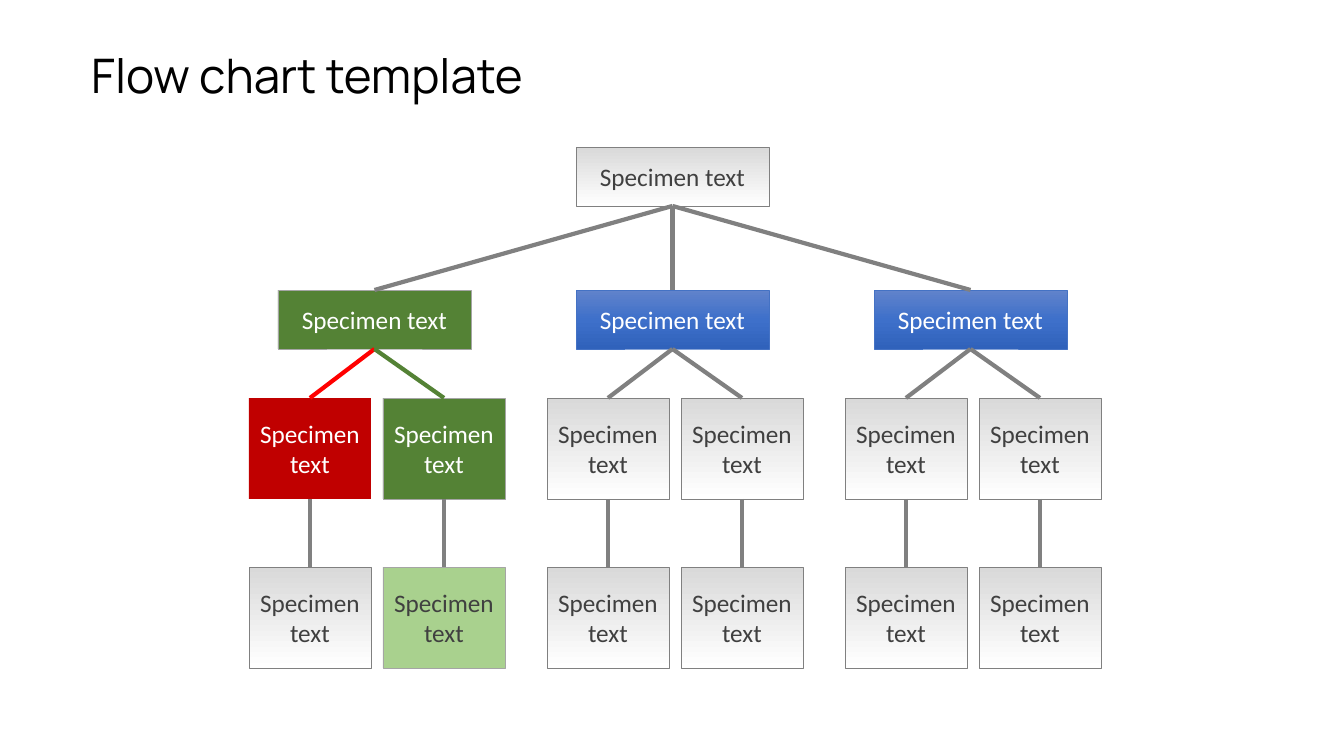
import copy
import pptx
import pptx.util
import pptx.dml.color
import pptx.enum.shapes
import pptx.enum.text
import pptx.oxml
import pptx.oxml.ns

PX = 914400 / 100.8
COLORS = {
    "black": "000000", "white": "FFFFFF", "text": "404040",
    "line": "808080", "edge": "A5A5A5", "silver": "D9D9D9",
    "green": "548235", "light_green": "A9D18E", "dark_red": "C00000", "red": "FF0000",
    "blue_top": "6183CB", "blue_mid": "3E70CA", "blue_end": "3062BB", "blue_edge": "4472C4",
}
RGB = {name: pptx.dml.color.RGBColor.from_string(value) for name, value in COLORS.items()}
STYLES = {
    "plain": (["silver", "white"], "line", "text"),
    "blue": (["blue_top", "blue_mid", "blue_end"], "blue_edge", "white"),
    "green": (["green"], "edge", "white"),
    "light_green": (["light_green"], "edge", "text"),
    "red": (["dark_red"], None, "white"),
}

prs = pptx.Presentation()
prs.slide_width = round(1344 * PX)
prs.slide_height = round(756 * PX)
slide = prs.slides.add_slide(prs.slide_layouts[5])


def add_box(x, y, w, h, style):
    fills, edge, ink = STYLES[style]
    s = slide.shapes.add_shape(pptx.enum.shapes.MSO_SHAPE.RECTANGLE,
                               *[round(v * PX) for v in (x, y, w, h)])
    s.shadow.inherit = False
    if len(fills) == 1:
        s.fill.solid()
        s.fill.fore_color.rgb = RGB[fills[0]]
    else:
        s.fill.gradient()
        s.fill.gradient_angle = 270
        stops = s._element.spPr.find(".//" + pptx.oxml.ns.qn("a:gsLst"))
        for _ in fills[2:]:
            stops.append(copy.deepcopy(stops[0]))
        for i, stop in enumerate(s.fill.gradient_stops):
            stop.position = i / (len(fills) - 1)
            stop.color.rgb = RGB[fills[i]]
    if edge:
        s.line.color.rgb = RGB[edge]
        s.line.width = pptx.util.Pt(0.5)
    else:
        s.line.fill.background()
    tf = s.text_frame
    tf.text = "Specimen text"
    tf.word_wrap = True
    tf.margin_left = tf.margin_right = round(5 * PX)
    tf.vertical_anchor = pptx.enum.text.MSO_ANCHOR.MIDDLE
    p = tf.paragraphs[0]
    p.alignment = pptx.enum.text.PP_ALIGN.CENTER
    r = p.runs[0]
    r.font.name = "Calibri"
    r.font.size = pptx.util.Pt(18)
    r.font.color.rgb = RGB[ink]
    return s


def join(upper, lower, color):
    c = slide.shapes.add_connector(pptx.enum.shapes.MSO_CONNECTOR.STRAIGHT, 0, 0, 0, 0)
    c.begin_connect(upper, 2)
    c.end_connect(lower, 0)
    c.line.color.rgb = RGB[color]
    c.line.width = pptx.util.Pt(3)
    c._element.spPr.append(pptx.oxml.parse_xml(
        "<a:effectLst %s/>" % pptx.oxml.ns.nsdecls("a")))


title = slide.shapes.title
title.left, title.top, title.width, title.height = [round(v * PX) for v in (81, 35, 605, 86)]
tf = title.text_frame
tf.text = "Flow chart template"
tf.word_wrap = True
tf.vertical_anchor = pptx.enum.text.MSO_ANCHOR.MIDDLE
p = tf.paragraphs[0]
p.alignment = pptx.enum.text.PP_ALIGN.LEFT
p.line_spacing = 0.9
r = p.runs[0]
r.font.name = "Manrope"
r.font.size = pptx.util.Pt(34)
r.font.color.rgb = RGB["black"]

plain_leaf = ("plain", "plain", "line")
branches = [
    ("green", [("red", "plain", "red"), ("green", "light_green", "green")]),
    ("blue", [plain_leaf, plain_leaf]),
    ("blue", [plain_leaf, plain_leaf]),
]

root = add_box(576, 147, 193, 59, "plain")
for i, (branch_style, leaves) in enumerate(branches):
    x = 278 + 298 * i
    branch = add_box(x, 290, 193, 59, branch_style)
    join(root, branch, "line")
    for j, (upper_style, lower_style, link) in enumerate(leaves):
        leaf_x = x - 29 + 134 * j
        upper = add_box(leaf_x, 398, 122, 101, upper_style)
        lower = add_box(leaf_x, 567, 122, 101, lower_style)
        join(branch, upper, link)
        join(upper, lower, "line")

prs.save("out.pptx")
